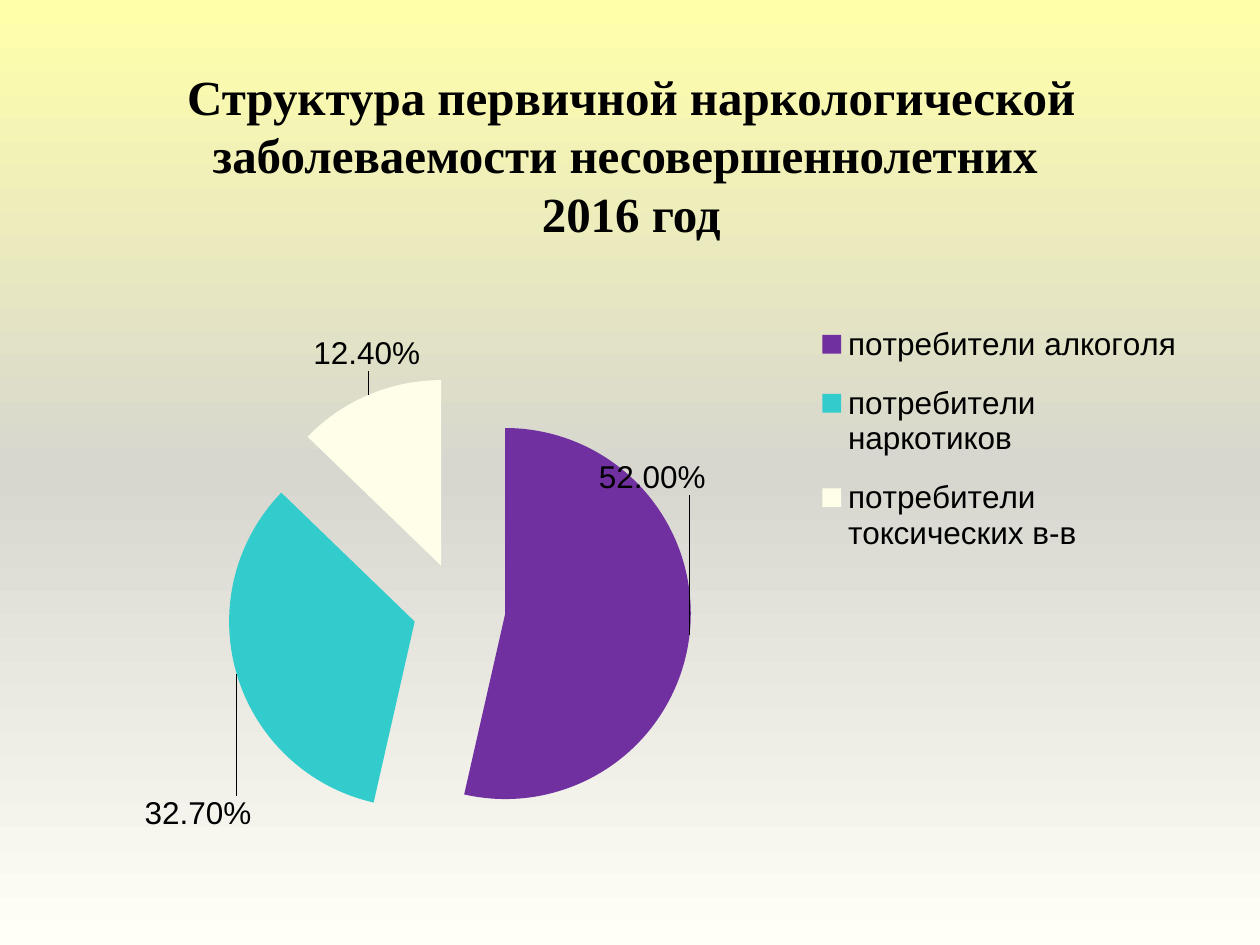
import copy
from dataclasses import dataclass

import pptx
import pptx.chart.data
import pptx.dml.color
import pptx.enum.chart
import pptx.enum.text
import pptx.oxml
import pptx.oxml.ns
import pptx.util
from pptx.util import Inches


@dataclass(frozen=True)
class Theme:
    ink: str = "000000"
    backdrop: tuple = ((0, "FFFFAA"), (0.5, "D7D7D0"), (1, "FFFFF7"))
    title_font: str = "Times New Roman"
    chart_font: str = "Arial"
    title_size: int = 28
    chart_size: int = 18


THEME = Theme()
TITLE = ("Структура первичной наркологической заболеваемости "
         "несовершеннолетних \v2016 год")
# Group, share, slice colour, label shift as fractions of the chart
SHARES = (
    ("потребители алкоголя", 0.52, "7030A0", (-0.09, -0.31)),
    ("потребители наркотиков", 0.327, "33CCCC", (0.02, 0.21)),
    ("потребители токсических в-в", 0.124, "FFFFE9", (0.05, -0.03)),
)


def rgb(value):
    return pptx.dml.color.RGBColor.from_string(value)


def style_font(font, name, size, bold=False):
    font.name = name
    font.size = pptx.util.Pt(size)
    font.bold = bold
    font.color.rgb = rgb(THEME.ink)


def chart_element(tag, **values):
    """Make a chart element whose children each carry one val."""
    children = "".join(f'<c:{key} val="{value}"/>' for key, value in values.items())
    return pptx.oxml.parse_xml(
        f'<c:{tag} {pptx.oxml.ns.nsdecls("c")}>{children}</c:{tag}>')


def set_layout(parent, index, **values):
    """Place a chart part by fractions of the chart area."""
    for old in parent.findall(pptx.oxml.ns.qn("c:layout")):
        parent.remove(old)
    layout = chart_element("layout")
    layout.append(chart_element("manualLayout", **values))
    parent.insert(index, layout)


def paint_background(slide):
    fill = slide.background.fill
    fill.gradient()
    fill.gradient_angle = 270
    stop_list = slide.element.find(".//" + pptx.oxml.ns.qn("a:gsLst"))
    stop_list.insert(1, copy.deepcopy(stop_list[0]))
    for stop, (position, color) in zip(fill.gradient_stops, THEME.backdrop):
        stop.position = position
        stop.color.rgb = rgb(color)


def add_title(slide):
    title = slide.shapes.title
    title.left, title.top = Inches(0.51), Inches(0.36)
    title.width, title.height = Inches(9), Inches(1.73)
    frame = title.text_frame
    frame.text = TITLE
    frame.word_wrap = True
    frame.vertical_anchor = pptx.enum.text.MSO_ANCHOR.MIDDLE
    heading = frame.paragraphs[0]
    heading.alignment = pptx.enum.text.PP_ALIGN.CENTER
    for run in heading.runs:
        style_font(run.font, THEME.title_font, THEME.title_size, bold=True)


def add_pie(slide):
    data = pptx.chart.data.CategoryChartData(number_format="0.00%")
    data.categories = [group for group, *_ in SHARES]
    data.add_series("Series 1", [share for _, share, *_ in SHARES])
    pie = slide.shapes.add_chart(
        pptx.enum.chart.XL_CHART_TYPE.PIE, Inches(0.83), Inches(2.18),
        Inches(8.66), Inches(4.49), data).chart
    pie.has_title = False
    style_font(pie.font, THEME.chart_font, THEME.chart_size)
    plot_area = pie.plots[0]._element.getparent()
    set_layout(plot_area, 0, layoutTarget="inner", xMode="edge", yMode="edge",
               x=0.01, y=0.18, w=0.63, h=0.82)
    style_slices(pie.plots[0].series[0])
    add_legend(pie)


def style_slices(shares):
    # Pull all slices apart
    explosion = chart_element("explosion")
    explosion.set("val", "25")
    shares._element.find(pptx.oxml.ns.qn("c:tx")).addnext(explosion)

    labels = shares.data_labels
    labels.show_value = True
    labels.number_format = "0.00%"
    labels.number_format_is_linked = False
    for index, (_, _, color, (shift_x, shift_y)) in enumerate(SHARES):
        point = shares.points[index]
        point.format.fill.solid()
        point.format.fill.fore_color.rgb = rgb(color)
        point.format.line.fill.background()
        point.data_label.position = pptx.enum.chart.XL_LABEL_POSITION.OUTSIDE_END
        style_font(point.data_label.font, THEME.chart_font, THEME.chart_size)
        label = labels._element.findall(pptx.oxml.ns.qn("c:dLbl"))[index]
        set_layout(label, 1, x=shift_x, y=shift_y)
        # Keep each percentage on one line
        label.find(".//" + pptx.oxml.ns.qn("a:bodyPr")).set("wrap", "none")


def add_legend(pie):
    pie.has_legend = True
    legend = pie.legend
    legend.position = pptx.enum.chart.XL_LEGEND_POSITION.RIGHT
    legend.include_in_layout = False
    style_font(legend.font, THEME.chart_font, THEME.chart_size)
    set_layout(legend._element, 1, xMode="edge", yMode="edge",
               x=0.65, y=0.05, w=0.34, h=0.48)


def main():
    deck = pptx.Presentation()
    deck.slide_width, deck.slide_height = Inches(10), Inches(7.5)
    slide = deck.slides.add_slide(deck.slide_layouts[5])
    paint_background(slide)
    add_title(slide)
    add_pie(slide)
    deck.save("out.pptx")


if __name__ == "__main__":
    main()
